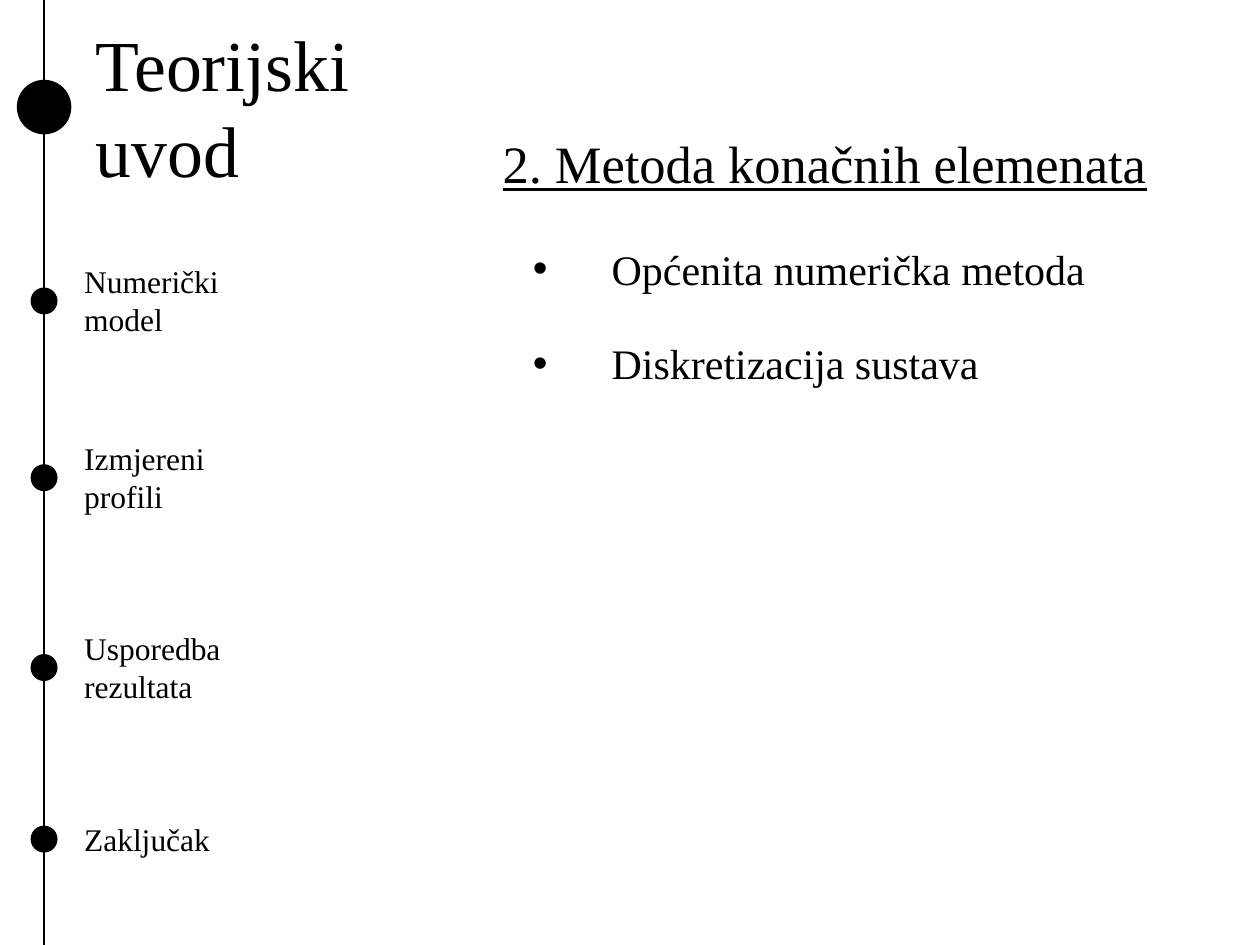
from lxml import etree
from pptx import Presentation
from pptx.dml.color import RGBColor
from pptx.enum.shapes import MSO_CONNECTOR, MSO_SHAPE
from pptx.enum.text import MSO_AUTO_SIZE
from pptx.oxml.ns import qn
from pptx.util import Pt

OVAL = MSO_SHAPE.OVAL
LINE = MSO_CONNECTOR.STRAIGHT
GROW = MSO_AUTO_SIZE.SHAPE_TO_FIT_TEXT
FONT = "Times New Roman"
INK = "000000"
WIDE, HIGH = 720, 540
AXIS = 25.2
INDENT = 45

TITLE = ("Teorijski uvod", 47.5, 7.9, 178.6, 106.6)
HEAD = ("2. Metoda konačnih elemenata", 280.1, 71.3, 387.4, 43.9)
STEPS = [
    ("Numerički model", 172, 51.1),
    ("Izmjereni profili", 273, 51.1),
    ("Usporedba rezultata", 381.5, 51.1),
    ("Zaključak", 479.5, 28.8),
]
POINTS = ["Općenita numerička metoda", "Diskretizacija sustava"]


def tint(code):
    return RGBColor.from_string(code)


def write(text, x, y, w, h, size, wrap=True):
    box = slide.shapes.add_textbox(Pt(x), Pt(y), Pt(w), Pt(h))
    frame = box.text_frame
    frame.word_wrap = wrap
    frame.auto_size = GROW
    frame.text = text
    para = frame.paragraphs[0]
    font = para.runs[0].font
    font.name = FONT
    font.size = Pt(size)
    font.color.rgb = tint(INK)
    return para


def dot(mid, size):
    shape = slide.shapes.add_shape(
        OVAL, Pt(AXIS - size / 2), Pt(mid - size / 2), Pt(size), Pt(size))
    shape.shadow.inherit = False
    shape.fill.solid()
    shape.fill.fore_color.rgb = tint(INK)
    shape.line.color.rgb = tint(INK)
    shape.line.width = Pt(1)


def bullet(para):
    props = para._p.get_or_add_pPr()
    props.set("marL", str(Pt(INDENT)))
    props.set("indent", str(-Pt(INDENT)))
    etree.SubElement(props, qn("a:buFont")).set("typeface", "Arial")
    etree.SubElement(props, qn("a:buChar")).set("char", "•")


deck = Presentation()
deck.slide_width, deck.slide_height = Pt(WIDE), Pt(HIGH)
slide = deck.slides.add_slide(deck.slide_layouts[6])

axis = slide.shapes.add_connector(LINE, Pt(AXIS), Pt(0), Pt(AXIS), Pt(HIGH))
axis.line.color.rgb = tint(INK)
axis.line.width = Pt(1.5)
etree.SubElement(axis._element.spPr, qn("a:effectLst"))

write(*TITLE, 41)
dot(61.2, 30.2)
for text, mid, high in STEPS:
    write(text, 41, mid - high / 2, 101.5, high, 18)
    dot(mid, 14.4)

write(*HEAD, 30, wrap=False).runs[0].font.underline = True
for row, text in enumerate(POINTS):
    bullet(write(text, 297.4, 135.4 + 54 * row, 352, 36, 24))

deck.save("out.pptx")
